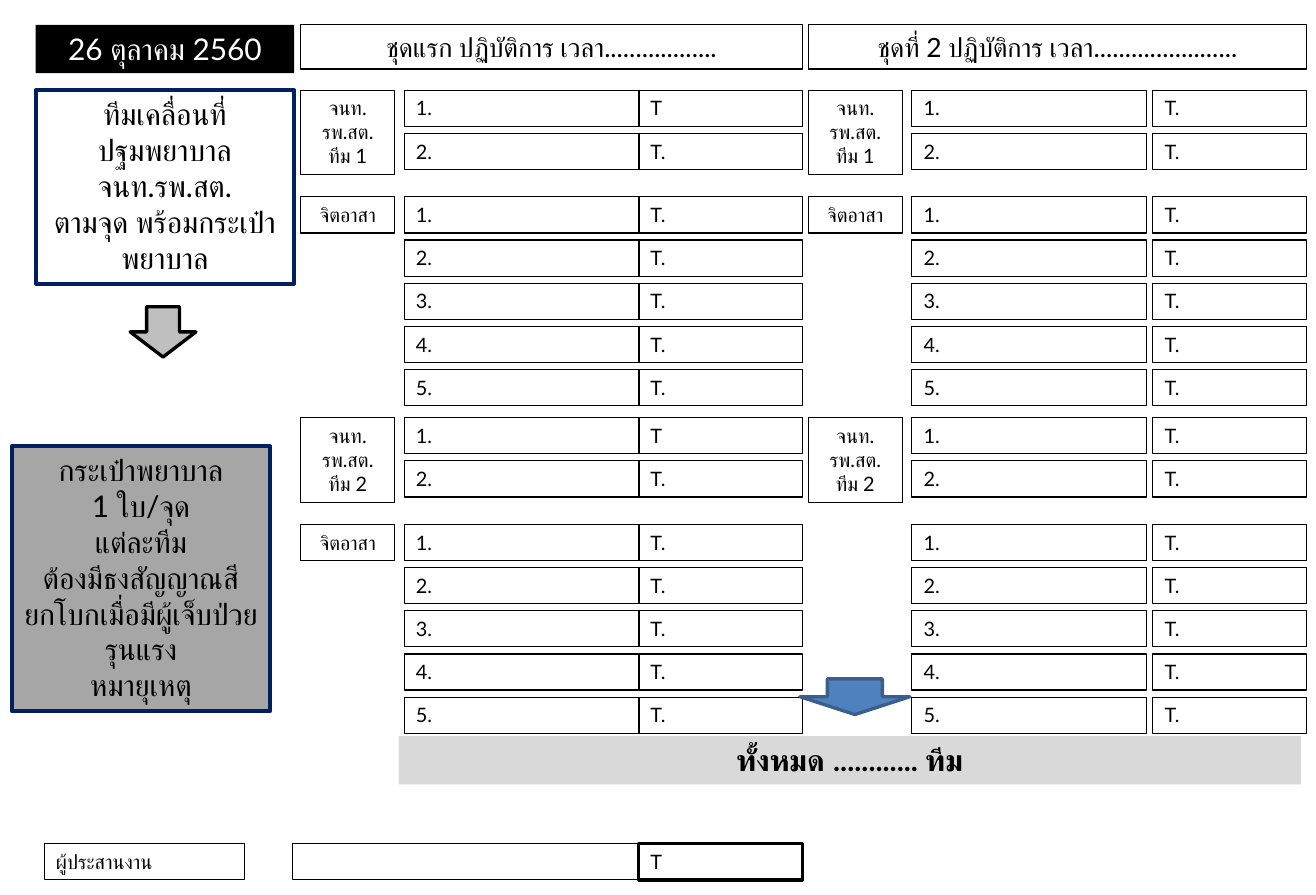
import pptx
import pptx.dml.color
import pptx.enum.lang
import pptx.enum.shapes
import pptx.enum.text
import pptx.util
from pptx.util import Cm

CENTER = pptx.enum.text.PP_ALIGN.CENTER
LEFT = pptx.enum.text.PP_ALIGN.LEFT


def paint(shape, fill, line, line_width):
    """Colour a shape's fill and outline; None leaves either one empty."""
    if fill:
        shape.fill.solid()
        shape.fill.fore_color.rgb = pptx.dml.color.RGBColor.from_string(fill)
    else:
        shape.fill.background()
    if line:
        shape.line.color.rgb = pptx.dml.color.RGBColor.from_string(line)
        shape.line.width = pptx.util.Pt(line_width)
    else:
        shape.line.fill.background()


def add_box(left, top, width, height, text, size=12, align=LEFT, color="000000",
            fill=None, line="000000", line_width=0.75, bold=False):
    box = slide.shapes.add_textbox(Cm(left), Cm(top), Cm(width), Cm(height))
    paint(box, fill, line, line_width)
    frame = box.text_frame
    frame.word_wrap = True
    frame.auto_size = pptx.enum.text.MSO_AUTO_SIZE.SHAPE_TO_FIT_TEXT
    frame.text = text
    for paragraph in frame.paragraphs:
        paragraph.alignment = align
        for run in paragraph.runs:
            run.font.name = "Lato"
            run.font.size = pptx.util.Pt(size)
            run.font.bold = bold
            run.font.language_id = pptx.enum.lang.MSO_LANGUAGE_ID.THAI
            run.font.color.rgb = pptx.dml.color.RGBColor.from_string(color)


presentation = pptx.Presentation()
presentation.slide_width = Cm(28)
presentation.slide_height = Cm(19.05)
slide = presentation.slides.add_slide(presentation.slide_layouts[6])

# Date and mobile team
add_box(0.76, 0.53, 5.5, 1.03, "26 ตุลาคม 2560", 18, CENTER, "FFFFFF",
        fill="000000", line=None)
add_box(0.76, 1.92, 5.5, 4.12,
        "ทีมเคลื่อนที่ปฐมพยาบาล\nจนท.รพ.สต.\nตามจุด พร้อมกระเป๋าพยาบาล",
        18, CENTER, line="002060", line_width=2.25)

# Shift headings
add_box(6.4, 0.53, 10.67, 0.94, "ชุดแรก ปฏิบัติการ เวลา..................", 16, CENTER)
add_box(17.2, 0.53, 10.6, 0.94, "ชุดที่ 2 ปฏิบัติการ เวลา.......................", 16, CENTER)

# Roster: two teams in each of two shifts, staff first and volunteers below
ROW_HEIGHT = 0.77
ROW_STEP = 0.92
NAME_WIDTH = 5
shifts = [
    # role left, name left, phone left, phone width, first phone label
    (6.4, 8.6, 13.59, 3.48, "T"),
    (17.2, 19.4, 24.53, 3.27, "T."),
]
for team, team_top in ((1, 1.92), (2, 8.89)):
    volunteer_top = team_top + 2.27
    for shift, (role_left, name_left, phone_left, phone_width, first_phone) in enumerate(shifts, 1):
        add_box(role_left, team_top, 2, 1.8, f"จนท.\nรพ.สต.\nทีม {team}", align=CENTER)
        if (team, shift) != (2, 2):
            add_box(role_left, volunteer_top, 2, ROW_HEIGHT, "จิตอาสา", align=CENTER)
        for group_top, people in ((team_top, 2), (volunteer_top, 5)):
            for person in range(people):
                top = group_top + person * ROW_STEP
                is_first = group_top == team_top and person == 0
                add_box(phone_left, top, phone_width, ROW_HEIGHT,
                        first_phone if is_first else "T.")
                add_box(name_left, top, NAME_WIDTH, ROW_HEIGHT, f"{person + 1}.")

# Total
add_box(8.48, 15.67, 19.2, 1.03, "ทั้งหมด ............ ทีม", 18, CENTER,
        fill="D9D9D9", line=None, bold=True)

# Arrows to the total and to the first-aid bag
for left, top, width, height, fill, line in (
    (17.02, 14.45, 2.34, 0.76, "4F81BD", "3A5F8C"),
    (2.77, 6.53, 1.4, 1.07, "BFBFBF", "000000"),
):
    arrow = slide.shapes.add_shape(pptx.enum.shapes.MSO_SHAPE.DOWN_ARROW,
                                   Cm(left), Cm(top), Cm(width), Cm(height))
    arrow.shadow.inherit = False
    paint(arrow, fill, line, 2)

# First-aid bag
add_box(0.25, 9.5, 5.5, 5.64,
        "กระเป๋าพยาบาล\n1 ใบ/จุด\nแต่ละทีม\nต้องมีธงสัญญาณสี\n"
        "ยกโบกเมื่อมีผู้เจ็บป่วยรุนแรง\nหมายุเหตุ",
        18, CENTER, fill="A6A6A6", line="002060", line_width=2.25)

# Coordinator
COORDINATOR_TOP = 17.96
add_box(0.94, COORDINATOR_TOP, 4.27, ROW_HEIGHT, "ผู้ประสานงาน")
add_box(6.22, COORDINATOR_TOP, 7.39, ROW_HEIGHT, "")
add_box(13.59, COORDINATOR_TOP, 3.48, ROW_HEIGHT, "T", fill="FFFFFF", line_width=2)

presentation.save("out.pptx")
